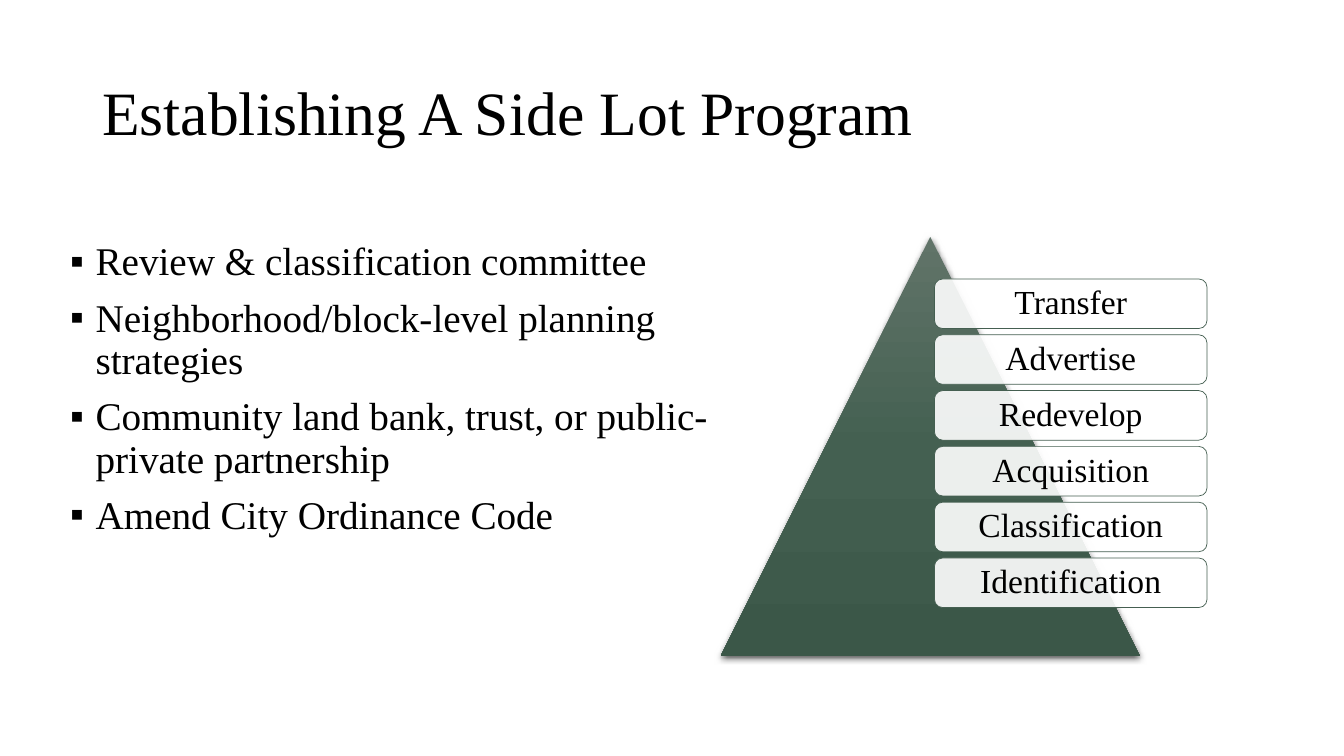
from lxml import etree
from pptx import Presentation
from pptx.dml.color import RGBColor
from pptx.enum.shapes import MSO_SHAPE
from pptx.enum.text import MSO_ANCHOR, PP_ALIGN
from pptx.oxml import parse_xml
from pptx.oxml.ns import qn
from pptx.util import Cm, Pt

TRIANGLE, ROUND_RECT = MSO_SHAPE.ISOSCELES_TRIANGLE, MSO_SHAPE.ROUNDED_RECTANGLE
MIDDLE, TOP = MSO_ANCHOR.MIDDLE, MSO_ANCHOR.TOP
LEFT, CENTER = PP_ALIGN.LEFT, PP_ALIGN.CENTER
A_NS = 'xmlns:a="http://schemas.openxmlformats.org/drawingml/2006/main"'

THEME = {
    "font": "Times New Roman",
    "text": RGBColor(0x00, 0x00, 0x00),
    "box": RGBColor(0xFF, 0xFF, 0xFF),
    "box_line": RGBColor(0x45, 0x5F, 0x51),
    "gradient": [(0, "617469"), (50, "446051"), (100, "3B5748")],
    "shadow": "000000",
    "title_size": Pt(44),
    "body_size": Pt(28),
    "step_size": Pt(24),
}

BULLETS = [
    "Review & classification committee",
    "Neighborhood/block-level planning strategies",
    "Community land bank, trust, or public-private partnership",
    "Amend City Ordinance Code",
]
STEPS = ["Transfer", "Advertise", "Redevelop",
         "Acquisition", "Classification", "Identification"]


def write(shape, lines, size, anchor=MIDDLE, align=LEFT, bullet=None):
    tf = shape.text_frame
    for name, value in {"word_wrap": True, "vertical_anchor": anchor}.items():
        setattr(tf, name, value)
    for i, line in enumerate(lines):
        p = tf.paragraphs[0] if i == 0 else tf.add_paragraph()
        if bullet:
            pPr = p._p.get_or_add_pPr()
            pPr.set("marL", str(Cm(0.64)))
            pPr.set("indent", str(-Cm(0.64)))
            etree.SubElement(pPr, qn("a:buFont")).set("typeface", "Arial")
            etree.SubElement(pPr, qn("a:buChar")).set("char", bullet)
        paragraph_format = {"alignment": align, "line_spacing": 0.9,
                            "space_before": Pt(10 if i else 0)}
        for name, value in paragraph_format.items():
            setattr(p, name, value)
        r = p.add_run()
        r.text = line
        for name, value in {"name": THEME["font"], "size": size}.items():
            setattr(r.font, name, value)
        r.font.color.rgb = THEME["text"]


prs = Presentation()
prs.slide_width, prs.slide_height = Cm(33.87), Cm(19.05)
s = prs.slides.add_slide(prs.slide_layouts[6])

# Title and bullet list
title = s.shapes.add_textbox(Cm(2.33), Cm(1.07), Cm(29.21), Cm(3.68))
write(title, ["Establishing A Side Lot Program"], THEME["title_size"])
body = s.shapes.add_textbox(Cm(1.52), Cm(5.97), Cm(17.83), Cm(12.01))
write(body, BULLETS, THEME["body_size"], anchor=TOP, bullet="▪")

# Pyramid with a three-stop gradient and a soft shadow
pyramid = s.shapes.add_shape(TRIANGLE, Cm(18.16), Cm(5.97), Cm(10.57), Cm(10.57))
pyramid.line.fill.background()
stops = "".join(f'<a:gs pos="{pos * 1000}"><a:srgbClr val="{color}"/></a:gs>'
                for pos, color in THEME["gradient"])
gradient = parse_xml(f'<a:gradFill {A_NS} rotWithShape="1"><a:gsLst>{stops}</a:gsLst>'
                     '<a:lin ang="5400000" scaled="0"/></a:gradFill>')
shadow = parse_xml(
    f'<a:effectLst {A_NS}><a:outerShdw blurRad="{Pt(4.5)}" dist="{Pt(1.5)}" '
    f'dir="5400000" algn="ctr" rotWithShape="0"><a:srgbClr val="{THEME["shadow"]}">'
    '<a:alpha val="63000"/></a:srgbClr></a:outerShdw></a:effectLst>')
spPr = pyramid._element.spPr
spPr.find(qn("a:prstGeom")).addnext(gradient)
spPr.append(shadow)

# Step boxes, each gap an eighth of the box height
box_height = Cm(1.25)
pitch = box_height * 9 // 8
for i, step in enumerate(STEPS):
    sp = s.shapes.add_shape(ROUND_RECT, Cm(23.55), Cm(7.03) + i * pitch,
                            Cm(6.87), box_height)
    sp.shadow.inherit = False
    sp.fill.solid()
    sp.fill.fore_color.rgb = THEME["box"]
    color = sp._element.spPr.find(qn("a:solidFill")).find(qn("a:srgbClr"))
    etree.SubElement(color, qn("a:alpha")).set("val", "90000")
    sp.line.color.rgb = THEME["box_line"]
    sp.line.width = Pt(0.5)
    write(sp, [step], THEME["step_size"], align=CENTER)

prs.save("out.pptx")
